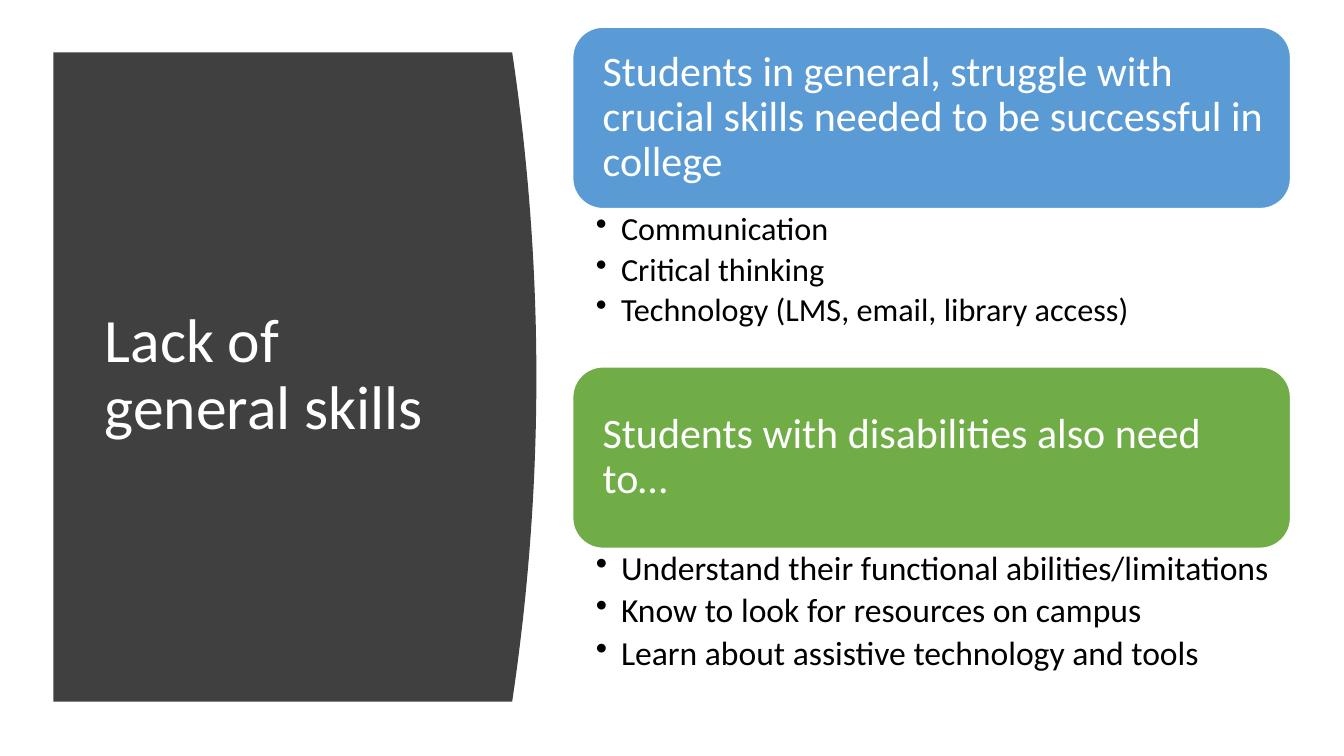
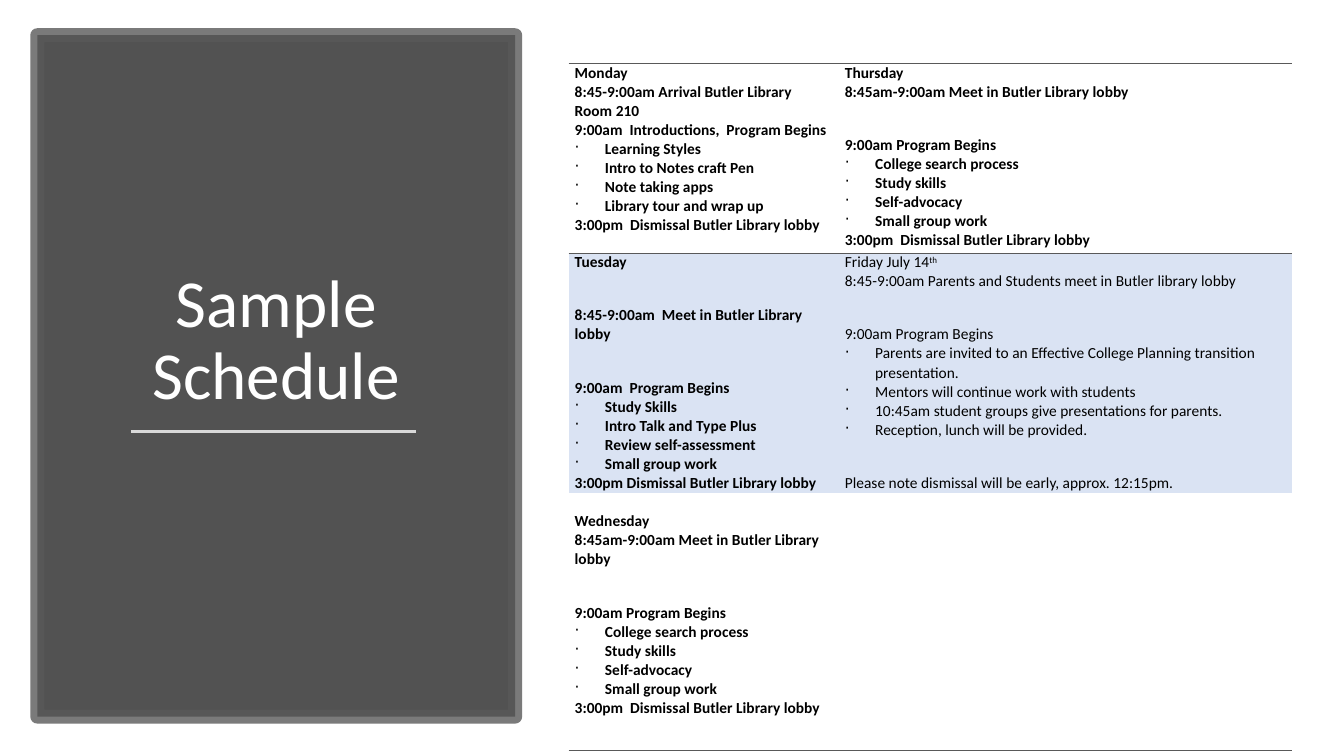
import pptx
import pptx.util
import pptx.dml.color
import pptx.enum.shapes
import pptx.enum.text
import pptx.oxml
import pptx.oxml.ns

Inches, Pt = pptx.util.Inches, pptx.util.Pt
anchor, align = pptx.enum.text.MSO_ANCHOR, pptx.enum.text.PP_ALIGN
shapes = pptx.enum.shapes.MSO_SHAPE
qn = pptx.oxml.ns.qn

# Shared colours and styles
DARK, EDGE, WHITE, BLACK = "404040", "595959", "FFFFFF", "000000"
RULE, BAND, BLUE, GREEN = "D9D9D9", "DAE3F3", "5B9BD5", "70AD47"
TITLE = {"name": "Calibri"}
TIGHT = {"line_spacing": 0.9, "alignment": align.LEFT}


def color(code):
    return pptx.dml.color.RGBColor.from_string(code)


def write(frame, lines, font, hue, para, indent=0.25):
    """Fill a frame; "· " and "• " start a bullet, "+" opens a gap above."""
    for num, line in enumerate(lines):
        item = frame.paragraphs[0] if num == 0 else frame.add_paragraph()
        for key, val in para.items():
            setattr(item, key, val)
        if line[0] == "+":
            item.space_before = Pt(24.4)
            line = line[1:]
        if line[0] in "·•":
            props = item._p.get_or_add_pPr()
            props.set("marL", str(Inches(indent)))
            props.set("indent", str(-Inches(indent)))
            mark = pptx.oxml.parse_xml(
                '<a:buChar xmlns:a="http://schemas.openxmlformats.org/'
                f'drawingml/2006/main" char="{line[0]}"/>')
            props.append(mark)
            line = line[2:]
        base, *raised = line.split("^")
        for text in [base] + raised:
            run = item.add_run()
            run.text = text
            for key, val in {**TITLE, **font}.items():
                setattr(run.font, key, val)
            run.font.color.rgb = color(hue)
            if text in raised:
                run._r.get_or_add_rPr().set("baseline", "30000")


deck = pptx.Presentation()
deck.slide_width, deck.slide_height = Inches(13.33), Inches(7.5)
skills, plan = [deck.slides.add_slide(deck.slide_layouts[6]) for _ in range(2)]

# Skills: dark panel with a bowed right side
left, top, side, base, bulge, steps = 0.53, 0.52, 5.08, 6.96, 0.24, 40
curve = []
for step in range(steps + 1):
    part = step / steps
    bow = 1 - (2 * part - 1) ** 2
    curve.append((Inches(side + bulge * bow), Inches(top + (base - top) * part)))
form = skills.shapes.build_freeform(Inches(left), Inches(top))
form.add_line_segments(curve + [(Inches(left), Inches(base))], close=True)
panel = form.convert_to_shape()
panel.shadow.inherit = False
panel.fill.solid()
panel.fill.fore_color.rgb = color(DARK)
panel.line.fill.background()

# Plan: framed panel, partly clear
card = plan.shapes.add_shape(shapes.RECTANGLE, Inches(0.37), Inches(0.35),
                             Inches(4.74), Inches(6.76))
card.shadow.inherit = False
card.line.width = Pt(10)
for paint, hue, share in ((card.fill, DARK, 90), (card.line.fill, EDGE, 80)):
    paint.solid()
    paint.fore_color.rgb = color(hue)
for node, share in zip(card._element.spPr.iter(qn("a:srgbClr")), (90, 80)):
    alpha = node.makeelement(qn("a:alpha"), {"val": str(share * 1000)})
    node.append(alpha)

# Titles
for slide, text, area, size, look, side in (
        (skills, "Lack of general skills", (0.94, 1.11, 3.74, 5.24), 44,
         anchor.MIDDLE, align.LEFT),
        (plan, "Sample Schedule", (0.74, 1, 4, 3.16), 48,
         anchor.BOTTOM, align.CENTER)):
    frame = slide.shapes.add_textbox(*map(Inches, area)).text_frame
    frame.word_wrap = True
    frame.vertical_anchor = look
    write(frame, [text], {"size": Pt(size)}, WHITE, {**TIGHT, "alignment": side})

# Line under the plan title
rule = plan.shapes.add_connector(pptx.enum.shapes.MSO_CONNECTOR.STRAIGHT,
                                 Inches(1.3), Inches(4.28), Inches(4.13), Inches(4.28))
rule.line.color.rgb = color(RULE)
rule.line.width = Pt(1.75)
props = rule._element.spPr
props.append(props.makeelement(qn("a:effectLst"), {}))

# Skills: headed bullet groups
groups = (
    (0.27, BLUE, 23, 0.04,
     "Students in general, struggle with crucial skills needed to be successful in college",
     ["• Communication", "• Critical thinking",
      "• Technology (LMS, email, library access)"]),
    (3.64, GREEN, 24, 0.03,
     "Students with disabilities also need to…",
     ["• Understand their functional abilities/limitations",
      "• Know to look for resources on campus",
      "• Learn about assistive technology and tools"]))
for top, hue, size, pad, head, points in groups:
    block = skills.shapes.add_shape(shapes.ROUNDED_RECTANGLE, Inches(5.68),
                                    Inches(top), Inches(7.12), Inches(1.8))
    block.shadow.inherit = False
    block.fill.solid()
    block.fill.fore_color.rgb = color(hue)
    block.line.color.rgb = color(WHITE)
    block.line.width = Pt(1)
    notes = skills.shapes.add_textbox(Inches(5.68), Inches(top + 1.8),
                                      Inches(7.12), Inches(1.5))
    for shape, edge, rim, look in ((block, 0.21, 0.12, anchor.MIDDLE),
                                   (notes, 0.23, pad, anchor.TOP)):
        form = {"word_wrap": True, "vertical_anchor": look,
                "margin_left": Inches(edge), "margin_right": Inches(edge - 0.04),
                "margin_top": Inches(rim), "margin_bottom": Inches(rim)}
        for key, val in form.items():
            setattr(shape.text_frame, key, val)
    write(block.text_frame, [head], {"size": Pt(30)}, WHITE, TIGHT)
    write(notes.text_frame, points, {"size": Pt(size)}, BLACK,
          {**TIGHT, "space_after": Pt(size * 0.18)})

# Plan: schedule table
close = "3:00pm  Dismissal Butler Library lobby"
search = ["+9:00am Program Begins", "· College search process", "· Study skills",
          "· Self-advocacy", "· Small group work", close]
meet = "8:45am-9:00am Meet in Butler Library lobby"
days = [
    [["Monday", "8:45-9:00am Arrival Butler Library Room 210",
      "9:00am  Introductions,  Program Begins", "· Learning Styles",
      "· Intro to Notes craft Pen", "· Note taking apps",
      "· Library tour and wrap up", close],
     ["Thursday", meet] + search],
    [["Tuesday", "+8:45-9:00am  Meet in Butler Library lobby",
      "+9:00am  Program Begins", "· Study Skills", "· Intro Talk and Type Plus",
      "· Review self-assessment", "· Small group work",
      "3:00pm Dismissal Butler Library lobby"],
     ["Friday July 14^th",
      "8:45-9:00am Parents and Students meet in Butler library lobby",
      "+9:00am Program Begins",
      "· Parents are invited to an Effective College Planning transition presentation.",
      "· Mentors will continue work with students",
      "· 10:45am student groups give presentations for parents.",
      "· Reception, lunch will be provided.",
      "+Please note dismissal will be early, approx. 12:15pm."]],
    [["Wednesday", meet] + search, []]]
wide, tall = (2.68, 4.49), (1.88, 2.38, 2.56)
grid = plan.shapes.add_table(3, 2, Inches(5.64), Inches(0.63),
                             Inches(sum(wide)), Inches(sum(tall))).table
grid.first_row = grid.horz_banding = False
style = grid._tbl.tblPr.find(qn("a:tableStyleId"))
style.text = "{2D5ABB26-0587-4C30-8999-92F81FD0307C}"
for col, width in zip(grid.columns, wide):
    col.width = Inches(width)
for row, height in zip(grid.rows, tall):
    row.height = Inches(height)

lined = (("a:lnT", "a:lnB"), (), ("a:lnB",))
for down, row in enumerate(days):
    for over, lines in enumerate(row):
        cell = grid.cell(down, over)
        form = {"margin_left": Inches(0.06), "margin_right": Inches(0.06),
                "margin_top": Inches(0.19 if down == 2 else 0), "margin_bottom": 0}
        for key, val in form.items():
            setattr(cell, key, val)
        bold = not lines or lines[0][:6] != "Friday"
        write(cell.text_frame, lines, {"size": Pt(11), "bold": bold}, BLACK, {}, 0.3)
        # Borders come before the fill
        props = cell._tc.get_or_add_tcPr()
        for tag in lined[down]:
            edge = props.makeelement(qn(tag), {"w": str(Pt(0.75))})
            fill = edge.makeelement(qn("a:solidFill"), {})
            fill.append(fill.makeelement(qn("a:srgbClr"), {"val": EDGE}))
            edge.append(fill)
            props.append(edge)
        if down == 1:
            cell.fill.solid()
            cell.fill.fore_color.rgb = color(BAND)
        else:
            cell.fill.background()

deck.save("out.pptx")
